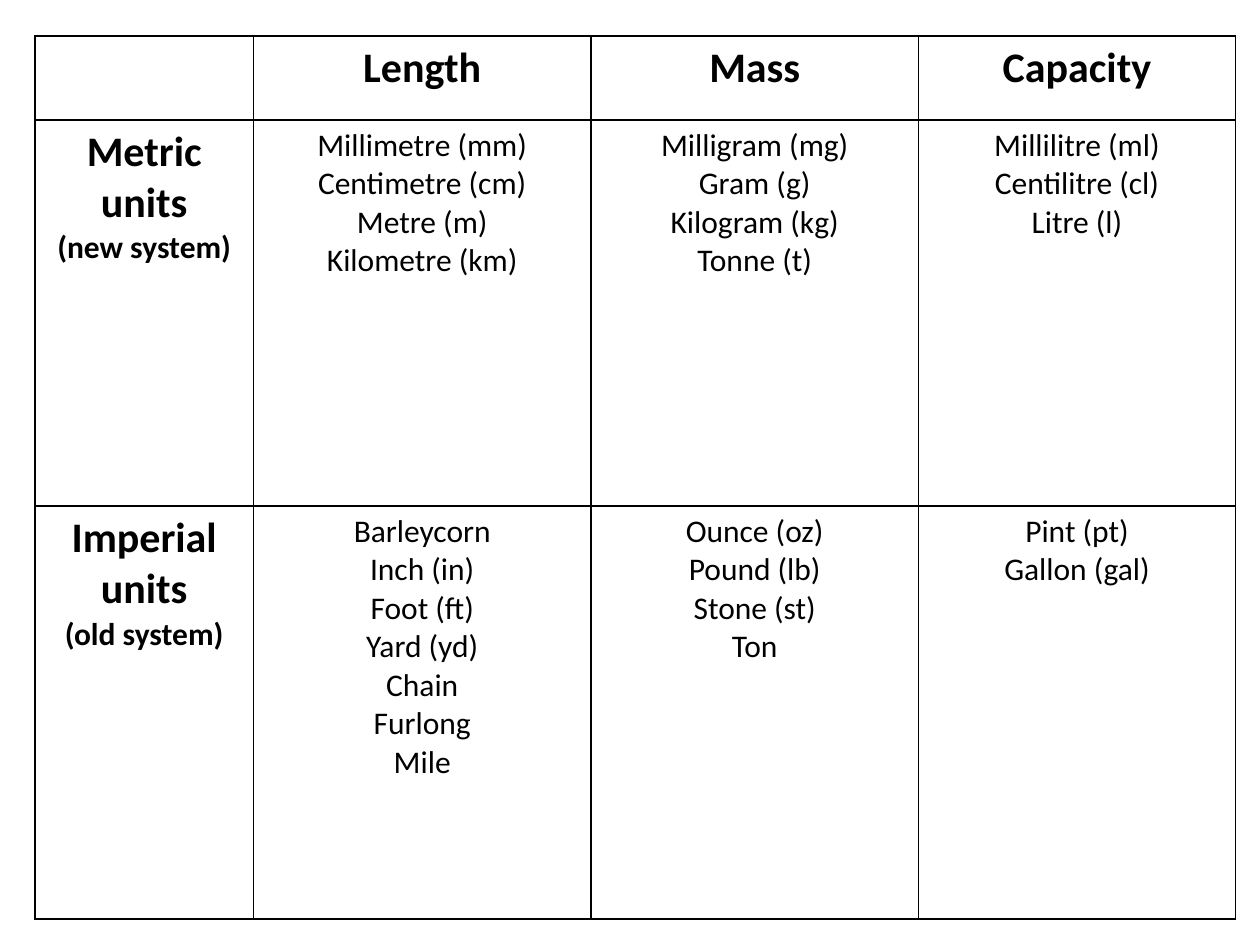
"""Build a slide with a table of metric and imperial units."""
from lxml import etree
from pptx import Presentation
from pptx.dml.color import RGBColor
from pptx.enum.text import PP_ALIGN
from pptx.oxml.ns import qn
from pptx.util import Pt

CENTER = PP_ALIGN.CENTER

HEADS = ["Length", "Mass", "Capacity"]
UNITS = [
    (
        ("Metric units", "(new system)"),
        ["Millimetre (mm)", "Centimetre (cm)", "Metre (m)", "Kilometre (km)"],
        ["Milligram (mg)", "Gram (g)", "Kilogram (kg)", "Tonne (t)"],
        ["Millilitre (ml)", "Centilitre (cl)", "Litre (l)"],
    ),
    (
        ("Imperial units", "(old system)"),
        ["Barleycorn", "Inch (in)", "Foot (ft)", "Yard (yd)", "Chain", "Furlong", "Mile"],
        ["Ounce (oz)", "Pound (lb)", "Stone (st)", "Ton"],
        ["Pint (pt)", "Gallon (gal)"],
    ),
]

THEME = {
    "font": "Calibri",
    "ink": "000000",
    "line": 1,
    "head": {"size": Pt(24), "bold": True},
    "note": {"size": Pt(18), "bold": True},
    "unit": {"size": Pt(18), "bold": False},
}
PAGE = (720, 540)
LEFT, TOP = 20, 20.7
COLS = [124.8, 193, 187, 181.4]
ROWS = [48, 220.6, 236]


def write(cell, lines):
    """Fill a cell with (text, style name) lines, one paragraph each."""
    frame = cell.text_frame
    for i, (text, style) in enumerate(lines):
        para = frame.add_paragraph() if i else frame.paragraphs[0]
        para.alignment = CENTER
        run = para.add_run()
        run.text = text
        for name, value in {"name": THEME["font"], **THEME[style]}.items():
            setattr(run.font, name, value)
        run.font.color.rgb = RGBColor.from_string(THEME["ink"])


def frame_cell(cell):
    """Clear the fill and draw all four borders."""
    cell.fill.background()
    props = cell._tc.get_or_add_tcPr()
    for i, side in enumerate(("lnL", "lnR", "lnT", "lnB")):
        line = etree.Element(qn(f"a:{side}"), w=str(Pt(THEME["line"])))
        fill = etree.SubElement(line, qn("a:solidFill"))
        etree.SubElement(fill, qn("a:srgbClr"), val=THEME["ink"])
        props.insert(i, line)


def main():
    """Lay out the table and save the deck."""
    deck = Presentation()
    deck.slide_width, deck.slide_height = map(Pt, PAGE)
    slide = deck.slides.add_slide(deck.slide_layouts[6])
    box = [Pt(n) for n in (LEFT, TOP, sum(COLS), sum(ROWS))]
    table = slide.shapes.add_table(len(ROWS), len(COLS), *box).table
    table.first_row = table.horz_banding = False
    for col, width in zip(table.columns, COLS):
        col.width = Pt(width)
    for row, height in zip(table.rows, ROWS):
        row.height = Pt(height)

    grid = [[[]] + [[(head, "head")] for head in HEADS]]
    for (name, note), *lists in UNITS:
        label = [(name, "head"), (note, "note")]
        grid.append([label] + [[(unit, "unit") for unit in units] for units in lists])

    for r, line in enumerate(grid):
        for c, lines in enumerate(line):
            cell = table.cell(r, c)
            write(cell, lines)
            frame_cell(cell)
    deck.save("out.pptx")


if __name__ == "__main__":
    main()
